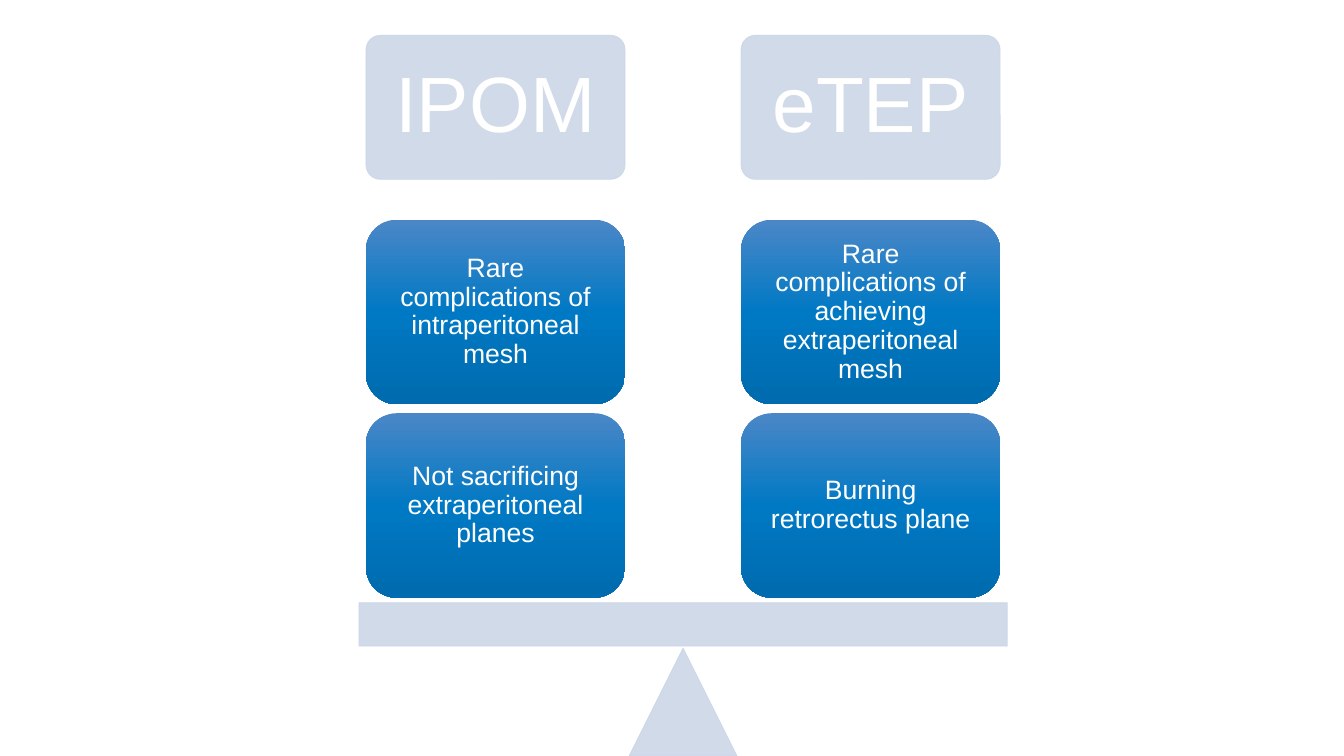
"""Build a balance-scale slide weighing IPOM against eTEP."""
from copy import deepcopy

from lxml.etree import SubElement
from pptx import Presentation
from pptx.dml.color import RGBColor
from pptx.enum.shapes import MSO_SHAPE
from pptx.enum.text import MSO_ANCHOR, PP_ALIGN
from pptx.oxml.ns import qn
from pptx.util import Inches, Pt

PALE = RGBColor(0xCC, 0xD6, 0xE7)
WHITE = RGBColor(0xFF, 0xFF, 0xFF)
GRADIENT = [
    RGBColor(0x4B, 0x87, 0xC7),
    RGBColor(0x00, 0x79, 0xC4),
    RGBColor(0x00, 0x6B, 0xAE),
]
COLUMNS = [
    (3.63, "IPOM", [
        "Rare complications of intraperitoneal mesh",
        "Not sacrificing extraperitoneal planes",
    ]),
    (7.35, "eTEP", [
        "Rare complications of achieving extraperitoneal mesh",
        "Burning retrorectus plane",
    ]),
]
BLOCK_WIDTH = 2.57
WEIGHT_TOP, WEIGHT_HEIGHT, WEIGHT_PITCH = 2.18, 1.83, 1.92


def add_pale_shape(kind, left, top, width, height):
    shape = page.shapes.add_shape(
        kind, Inches(left), Inches(top), Inches(width), Inches(height))
    shape.shadow.inherit = False
    shape.fill.solid()
    shape.fill.fore_color.rgb = PALE
    shape.line.color.rgb = PALE
    shape.line.width = Pt(0.5)
    for color in shape._element.spPr.iter(qn("a:srgbClr")):
        SubElement(color, qn("a:alpha")).set("val", "90000")
    return shape


def write_label(shape, text, size, margin):
    frame = shape.text_frame
    frame.text = text
    frame.word_wrap = True
    frame.vertical_anchor = MSO_ANCHOR.MIDDLE
    frame.margin_left = frame.margin_right = Inches(margin)
    frame.margin_top = frame.margin_bottom = Inches(margin)
    para = frame.paragraphs[0]
    para.alignment = PP_ALIGN.CENTER
    para.line_spacing = 0.9
    span = para.runs[0]
    span.font.name = "Arial"
    span.font.size = Pt(size)
    span.font.color.rgb = WHITE


deck = Presentation()
deck.slide_width = Inches(13.33)
deck.slide_height = Inches(7.5)
page = deck.slides.add_slide(deck.slide_layouts[6])

add_pale_shape(MSO_SHAPE.ISOSCELES_TRIANGLE, 6.24, 6.43, 1.07, 1.07)
add_pale_shape(MSO_SHAPE.RECTANGLE, 3.56, 5.98, 6.43, 0.43)

for left, title, reasons in COLUMNS:
    header = add_pale_shape(
        MSO_SHAPE.ROUNDED_RECTANGLE, left, 0.35, BLOCK_WIDTH, 1.43)
    header.adjustments[0] = 0.1
    write_label(header, title, 56, 0.23)

    for row, reason in enumerate(reasons):
        weight = page.shapes.add_shape(
            MSO_SHAPE.ROUNDED_RECTANGLE,
            Inches(left), Inches(WEIGHT_TOP + row * WEIGHT_PITCH),
            Inches(BLOCK_WIDTH), Inches(WEIGHT_HEIGHT))
        weight.shadow.inherit = False
        weight.line.fill.background()
        weight.fill.gradient()
        weight.fill.gradient_angle = 270
        stop_list = weight._element.spPr.find(".//" + qn("a:gsLst"))
        stop_list.append(deepcopy(stop_list[-1]))
        for index, stop in enumerate(weight.fill.gradient_stops):
            stop.position = index / 2
            stop.color.rgb = GRADIENT[index]
        write_label(weight, reason, 19, 0.08)

deck.save("out.pptx")
